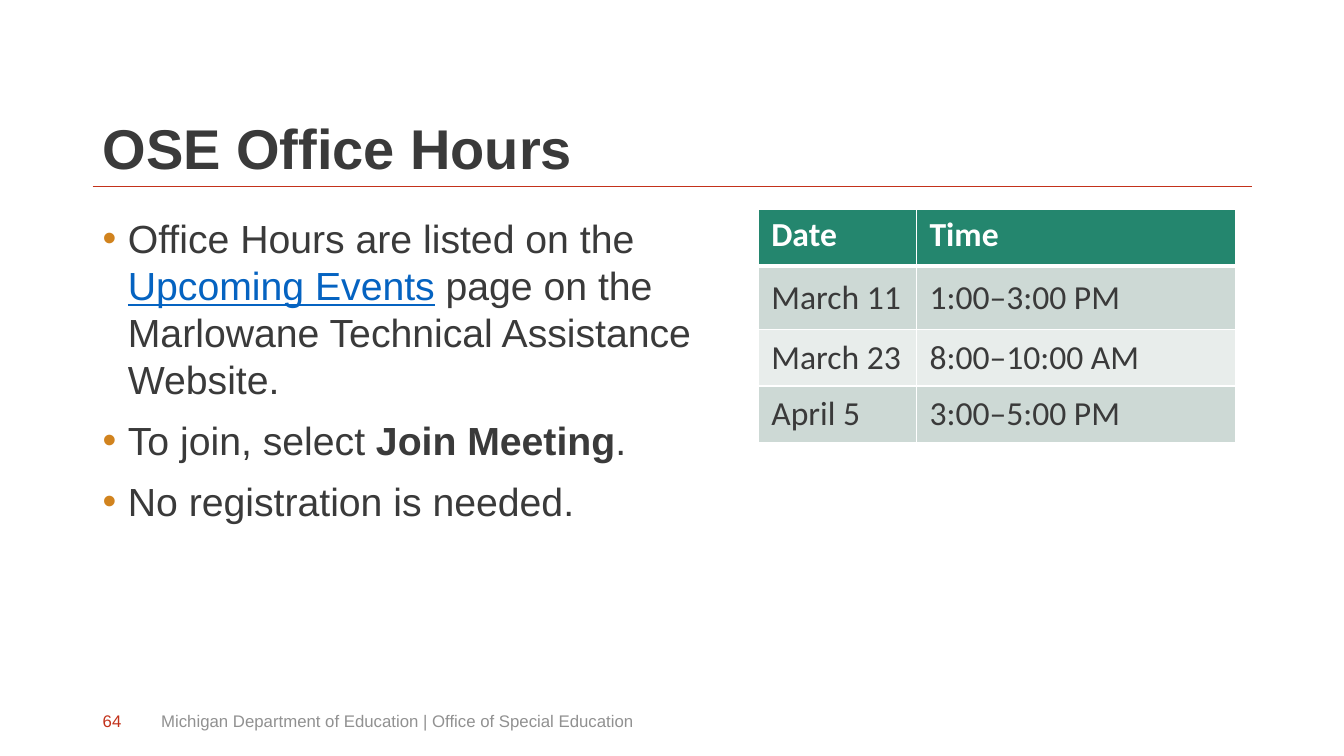
from lxml.etree import SubElement
from pptx import Presentation
from pptx.dml.color import RGBColor
from pptx.enum.shapes import MSO_CONNECTOR
from pptx.enum.text import MSO_ANCHOR
from pptx.oxml import parse_xml
from pptx.oxml.ns import nsdecls, qn
from pptx.util import Inches, Pt

TITLE = "OSE Office Hours"
# Each bullet is a list of (text, style) runs
BULLETS = [
    [("Office Hours are listed on the ", "plain"), ("Upcoming Events", "link"),
     (" page on the Marlowane Technical Assistance Website.", "plain")],
    [("To join, select ", "plain"), ("Join Meeting", "bold"), (".", "plain")],
    [("No registration is needed.", "plain")],
]
SCHEDULE = [
    ("Date", "Time"),
    ("March 11", "1:00–3:00 PM"),
    ("March 23", "8:00–10:00 AM"),
    ("April 5", "3:00–5:00 PM"),
]
PAGE = "64"
FOOTER = "Michigan Department of Education | Office of Special Education"

COLORS = {
    "text": "3A3A3A", "accent": "C3321B", "bullet": "D1831E", "link": "0563C1",
    "muted": "919191", "white": "FFFFFF", "header": "24866E",
    "band_dark": "CDD9D5", "band_light": "E8EDEB",
}
WIDTH, HEIGHT = 13.33, 7.5
LEFT, CONTENT_W = 0.92, 11.5
TITLE_TOP, RULE_Y, BODY_TOP, FOOTER_TOP = 0.4, 1.85, 2.08, 6.95
FOOTER_H = 0.4
TABLE_LEFT = 7.52
COLUMNS = [1.57, 3.17]
ROWS = [0.56, 0.63, 0.56, 0.56]


def rgb(name):
    return RGBColor.from_string(COLORS[name])


def style(run, size, color, font="Arial", bold=False):
    run.font.name, run.font.size, run.font.bold = font, Pt(size), bold
    run.font.color.rgb = rgb(color)


def add_box(s, left, top, width, height, anchor):
    box = s.shapes.add_textbox(*map(Inches, (left, top, width, height)))
    tf = box.text_frame
    tf.word_wrap = True
    tf.vertical_anchor = anchor
    return tf


def add_label(s, text, area, anchor, size, color, bold=False):
    tf = add_box(s, *area, anchor)
    tf.text = text
    p = tf.paragraphs[0]
    style(p.runs[0], size, color, bold=bold)
    return p


def add_bullets(s):
    tf = add_box(s, LEFT, BODY_TOP, 6.88, FOOTER_TOP - BODY_TOP, MSO_ANCHOR.TOP)
    for i, runs in enumerate(BULLETS):
        p = tf.add_paragraph() if i else tf.paragraphs[0]
        pPr = p._p.get_or_add_pPr()
        pPr.set("marL", str(Inches(0.25)))
        pPr.set("indent", str(-Inches(0.25)))
        color = SubElement(pPr, qn("a:buClr"))
        SubElement(color, qn("a:srgbClr"), val=COLORS["bullet"])
        SubElement(pPr, qn("a:buFont"), typeface="Arial")
        SubElement(pPr, qn("a:buChar"), char="•")
        p.line_spacing = Pt(33.6)
        p.space_before = Pt(10 if i else 0)
        for text, kind in runs:
            r = p.add_run()
            r.text = text
            style(r, 28, "link" if kind == "link" else "text", bold=kind == "bold")
            r.font.underline = kind == "link"


def set_borders(cell, widths):
    """Draw white borders, widths in points in the order L, R, T, B."""
    tcPr = cell._tc.get_or_add_tcPr()
    for i, (side, width) in enumerate(zip("LRTB", widths)):
        tcPr.insert(i, parse_xml(
            f'<a:ln{side} {nsdecls("a")} w="{Pt(width)}"><a:solidFill>'
            f'<a:srgbClr val="{COLORS["white"]}"/></a:solidFill></a:ln{side}>'))


def add_schedule(s):
    area = (TABLE_LEFT, BODY_TOP, sum(COLUMNS), sum(ROWS))
    table = s.shapes.add_table(len(ROWS), len(COLUMNS), *map(Inches, area)).table
    for column, width in zip(table.columns, COLUMNS):
        column.width = Inches(width)
    for i, (row, height) in enumerate(zip(table.rows, ROWS)):
        row.height = Inches(height)
        header = i == 0
        fill = "header" if header else "band_dark" if i % 2 else "band_light"
        for cell, text in zip(row.cells, SCHEDULE[i]):
            cell.text = text
            cell.margin_left = cell.margin_right = Inches(0.13)
            cell.margin_top = cell.margin_bottom = Inches(0.05)
            cell.vertical_anchor = MSO_ANCHOR.TOP if header else MSO_ANCHOR.MIDDLE
            style(cell.text_frame.paragraphs[0].runs[0], 24,
                  "white" if header else "text", "Calibri", header)
            cell.fill.solid()
            cell.fill.fore_color.rgb = rgb(fill)
            set_borders(cell, (1, 1, 3 if i == 1 else 1, 3 if header else 1))


def main():
    prs = Presentation()
    prs.slide_width, prs.slide_height = Inches(WIDTH), Inches(HEIGHT)
    s = prs.slides.add_slide(prs.slide_layouts[6])

    rule = s.shapes.add_connector(MSO_CONNECTOR.STRAIGHT, *map(
        Inches, (LEFT, RULE_Y, LEFT + CONTENT_W, RULE_Y)))
    rule.line.color.rgb = rgb("accent")
    rule.line.width = Pt(0.5)
    SubElement(rule._element.spPr, qn("a:effectLst"))

    title = add_label(s, TITLE, (LEFT, TITLE_TOP, CONTENT_W, RULE_Y - TITLE_TOP),
                      MSO_ANCHOR.BOTTOM, 40, "text", bold=True)
    title.line_spacing = 0.9
    add_bullets(s)
    add_schedule(s)
    add_label(s, PAGE, (LEFT, FOOTER_TOP, 0.45, FOOTER_H),
              MSO_ANCHOR.MIDDLE, 12, "accent")
    add_label(s, FOOTER, (1.5, FOOTER_TOP, 8.39, FOOTER_H),
              MSO_ANCHOR.MIDDLE, 12, "muted")
    prs.save("out.pptx")


if __name__ == "__main__":
    main()
